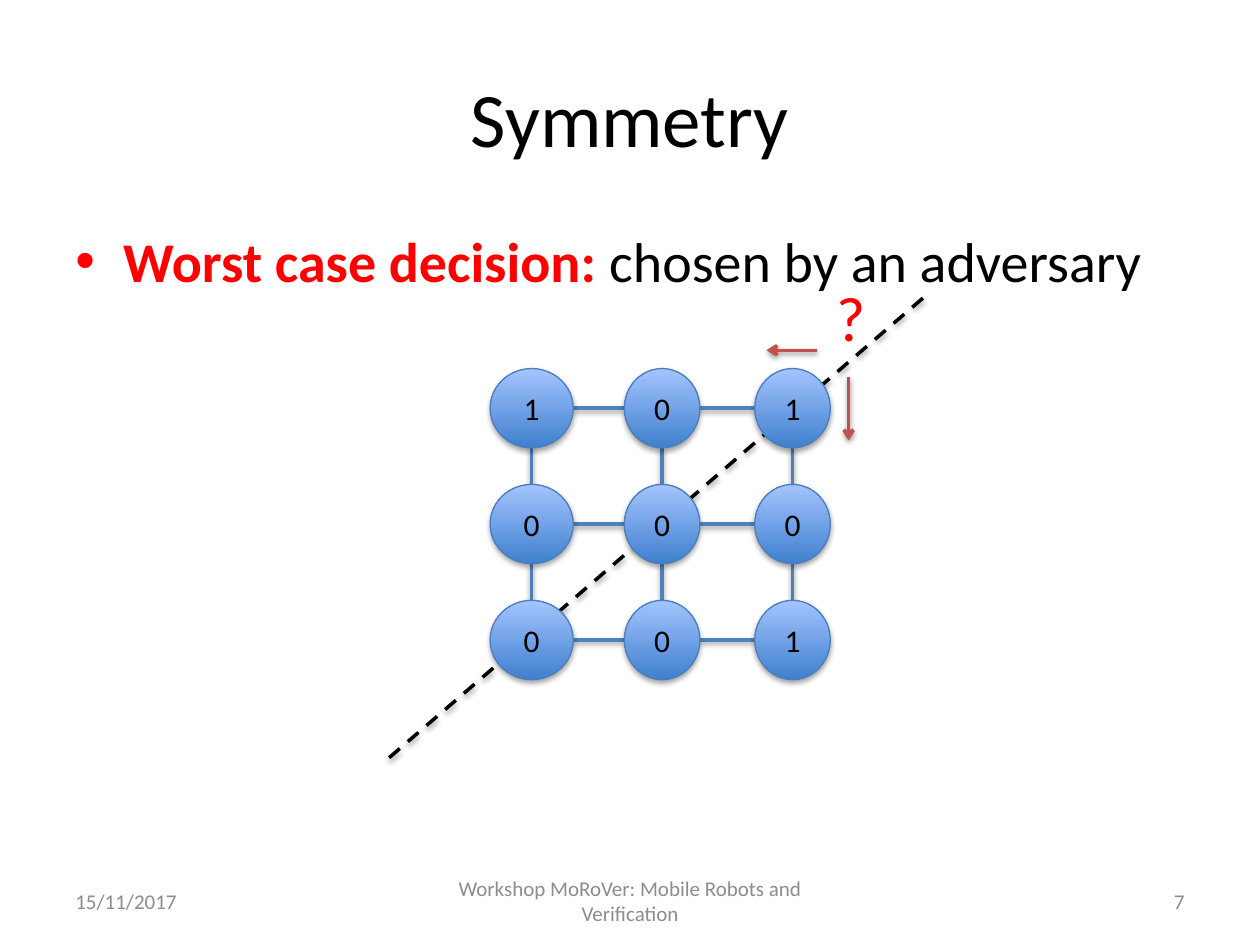
from dataclasses import dataclass
from itertools import product

from lxml import etree
from pptx import Presentation
from pptx import util as u
from pptx.dml.color import RGBColor
from pptx.enum import dml, shapes, text
from pptx.oxml import parse_xml
from pptx.oxml.ns import nsdecls, qn

WIDE, HIGH = 10, 7.5
LEFT, MID, RIGHT = text.PP_ALIGN.LEFT, text.PP_ALIGN.CENTER, text.PP_ALIGN.RIGHT


@dataclass(frozen=True)
class Theme:
    font: str = "Calibri"
    ink: str = "000000"
    red: str = "FF0000"
    grey: str = "8C8C8C"
    edge: str = "4F81BD"
    rim: str = "4B7EBC"
    low: str = "3F80CE"
    high: str = "A4C4FF"
    arrow: str = "C0504D"
    title: float = 44
    body: float = 32
    mark: float = 36
    node: float = 18
    foot: float = 12
    stroke: float = 2


T = Theme()


def rgb(code):
    return RGBColor.from_string(code)


def place(item, box):
    item.left, item.top, item.width, item.height = map(u.Inches, box)


def write(frame, parts, size, align=LEFT, anchor=text.MSO_ANCHOR.MIDDLE):
    """Fill the first paragraph with (words, colour, bold) parts."""
    frame.word_wrap = True
    frame.vertical_anchor = anchor
    para = frame.paragraphs[0]
    para.alignment = align
    for words, color, bold in parts:
        run = para.add_run()
        run.text = words
        font = run.font
        font.name, font.size, font.bold = T.font, u.Pt(size), bold
        font.color.rgb = rgb(color)
    return para


def label(slide, box, *args, **kw):
    item = slide.shapes.add_textbox(*map(u.Inches, box))
    return item.text_frame, write(item.text_frame, *args, **kw)


def shade(item, alpha, dist):
    """Give a soft shadow that falls straight down."""
    props = item._element.spPr
    for old in props.findall(qn("a:effectLst")):
        props.remove(old)
    props.append(parse_xml(
        f'<a:effectLst {nsdecls("a")}><a:outerShdw blurRad="{u.Pt(3.1)}" '
        f'dist="{u.Pt(dist)}" dir="5400000" rotWithShape="0">'
        f'<a:srgbClr val="{T.ink}"><a:alpha val="{alpha}000"/></a:srgbClr>'
        '</a:outerShdw></a:effectLst>'))


def link(slide, start, end, color, dash=False, head=False):
    item = slide.shapes.add_connector(
        shapes.MSO_CONNECTOR.STRAIGHT, *map(u.Inches, (*start, *end)))
    item.line.color.rgb = rgb(color)
    item.line.width = u.Pt(T.stroke)
    if dash:
        item.line.dash_style = dml.MSO_LINE.DASH
    if head:
        etree.SubElement(item.line._get_or_add_ln(), qn("a:tailEnd"), type="arrow")
    shade(item, 38, 1.6)


def node(slide, spot, wide, high, digit):
    x, y = spot
    item = slide.shapes.add_shape(shapes.MSO_SHAPE.OVAL, *map(
        u.Inches, (x - wide / 2, y - high / 2, wide, high)))
    item.fill.gradient()
    item.fill.gradient_angle = 90
    for stop, color, pos in zip(item.fill.gradient_stops, (T.low, T.high), (0, 1)):
        stop.color.rgb, stop.position = rgb(color), pos
    item.line.color.rgb = rgb(T.rim)
    item.line.width = u.Pt(0.75)
    shade(item, 35, 1.8)
    write(item.text_frame, [(digit, T.ink, False)], T.node, MID)


def head(slide, box, words):
    title = slide.shapes.title
    place(title, box)
    write(title.text_frame, [(words, T.ink, False)], T.title, MID)


def body(slide, box, parts):
    _, para = label(slide, box, parts, T.body, anchor=text.MSO_ANCHOR.TOP)
    para.space_before = u.Pt(0.2 * T.body)
    props = para._p.get_or_add_pPr()
    props.set("marL", str(u.Inches(0.38)))
    props.set("indent", str(u.Inches(-0.38)))
    etree.SubElement(props, qn("a:buFont"), typeface="Arial")
    etree.SubElement(props, qn("a:buChar"), char="•")


def graph(slide, box, rows):
    """Draw a square grid of robots; box runs between the corner centres."""
    left, top, wide, high = box
    last = len(rows) - 1
    widths, tall = (0.66, 0.6, 0.6), 0.63

    def at(col, row):
        return left + col * wide / last, top + row * high / last

    link(slide, at(3, -0.95), at(-1.15, 3.07), T.ink, dash=True)
    for row, col in product(range(last + 1), repeat=2):
        x, y = at(col, row)
        if col < last:
            end = at(col + 1, row)[0] - widths[col + 1] / 2
            link(slide, (x + widths[col] / 2, y), (end, y), T.edge)
        if row < last:
            end = at(col, row + 1)[1] - tall / 2
            link(slide, (x, y + tall / 2), (x, end), T.edge)
        node(slide, (x, y), widths[col], tall, rows[row][col])
    link(slide, at(2.43, -0.27), at(2.43, 0.28), T.arrow, head=True)
    link(slide, at(2.19, -0.5), at(1.8, -0.5), T.arrow, head=True)
    frame, _ = label(slide, (*at(2.24, -1.17), 0.44, 0.71), [("?", T.red, False)],
                     T.mark, anchor=text.MSO_ANCHOR.TOP)
    frame.word_wrap = False


def foot(slide, box, items):
    left, top, wide, high = box
    side, centre = wide * 0.26, wide * 0.352
    spans = ((left, side), (left + (wide - centre) / 2, centre),
             (left + wide - side, side))
    for words, (x, w), align in zip(items, spans, (LEFT, MID, RIGHT)):
        label(slide, (x, top, w, high), [(words, T.grey, False)], T.foot, align)


def main():
    deck = Presentation()
    deck.slide_width, deck.slide_height = u.Inches(WIDE), u.Inches(HIGH)
    slide = deck.slides.add_slide(deck.slide_layouts[5])
    edge, span = WIDE * 0.05, WIDE * 0.9
    head(slide, (edge, HIGH * 0.04, span, HIGH / 6), "Symmetry")
    graph(slide, (4.22, 3.24, 2.07, 1.84), ("101", "000", "001"))
    body(slide, (edge, 1.75, span, HIGH * 0.66),
         [("Worst case decision: ", T.red, True),
          ("chosen by an adversary", T.ink, False)])
    foot(slide, (edge, 6.95, span, 0.4),
         ("15/11/2017", "Workshop MoRoVer: Mobile Robots and Verification", "7"))
    deck.save("out.pptx")


if __name__ == "__main__":
    main()
